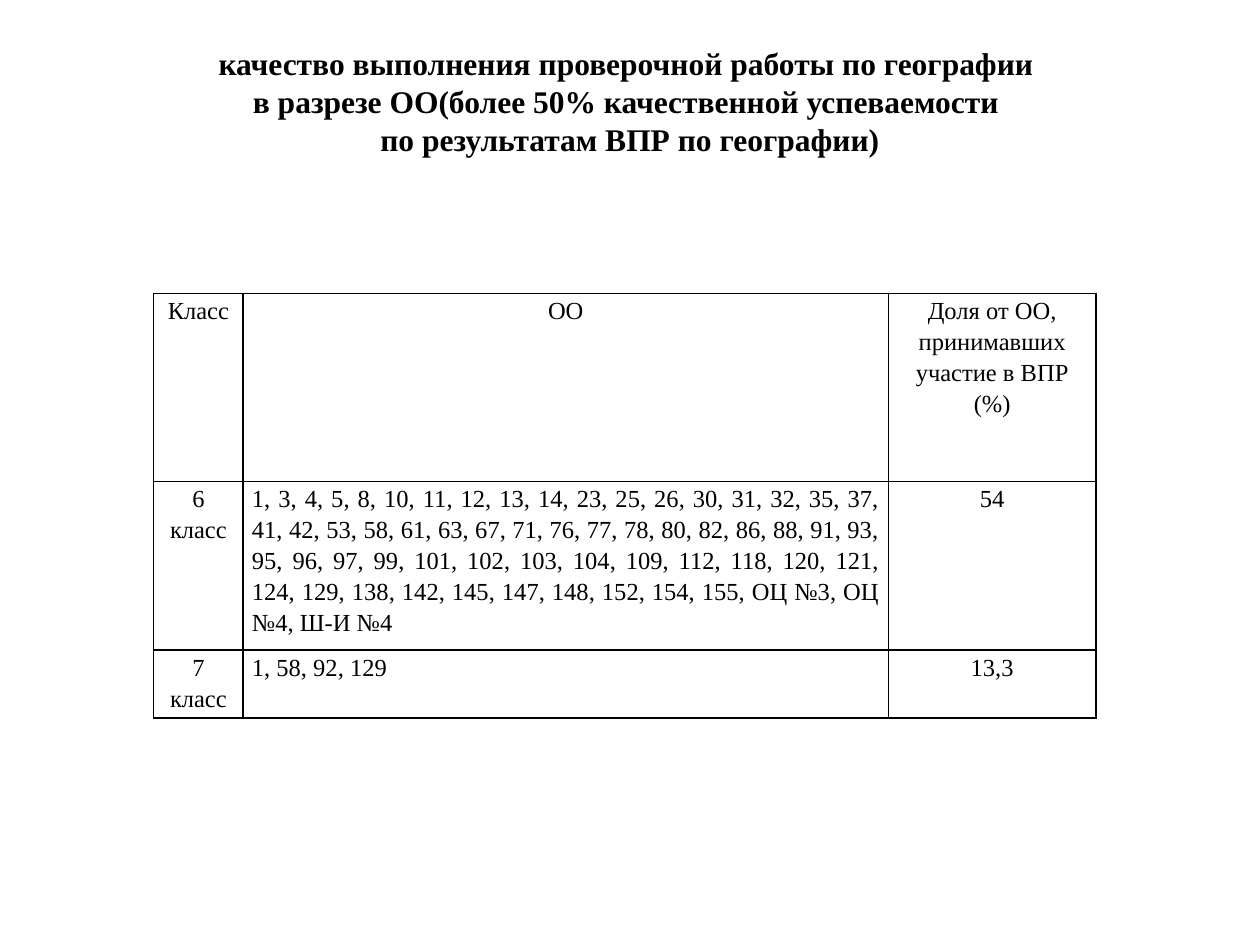
from dataclasses import dataclass

from lxml import etree
from pptx import Presentation
from pptx.dml.color import RGBColor
from pptx.enum.text import MSO_ANCHOR, PP_ALIGN
from pptx.oxml.ns import qn
from pptx.util import Inches, Pt

CENTER, JUSTIFY = PP_ALIGN.CENTER, PP_ALIGN.JUSTIFY
TOP = MSO_ANCHOR.TOP
BLACK = RGBColor(0, 0, 0)
FONT = "Times New Roman"
TITLE_FORMAT = {"name": FONT, "size": Pt(18), "bold": True}
CELL_FORMAT = {"name": FONT, "size": Pt(14), "bold": False}
CELL_MARGINS = {
    "margin_left": Inches(0.07),
    "margin_right": Inches(0.07),
    "margin_top": 0,
    "margin_bottom": 0,
}
COLUMN_WIDTHS = (0.71, 5.12, 1.65)
TITLE = (
    "качество выполнения проверочной работы по географии \v"
    "в разрезе ОО(более 50% качественной успеваемости \v"
    "по результатам ВПР по географии)"
)


@dataclass(frozen=True)
class Row:
    grade: str
    schools: str
    share: str
    height: float
    schools_align: PP_ALIGN = JUSTIFY


ROWS = (
    Row("Класс", "ОО", "Доля от ОО, принимавших участие в ВПР (%)", 1.49, CENTER),
    Row(
        "6 класс",
        "1, 3, 4, 5, 8, 10, 11, 12, 13, 14, 23, 25, 26, 30, 31, 32, 35, 37, "
        "41, 42, 53, 58, 61, 63, 67, 71, 76, 77, 78, 80, 82, 86, 88, 91, 93, "
        "95, 96, 97, 99, 101, 102, 103, 104, 109, 112, 118, 120, 121, "
        "124, 129, 138, 142, 145, 147, 148, 152, 154, 155, ОЦ №3, ОЦ №4, Ш-И №4",
        "54",
        1.23,
    ),
    Row("7 класс", "1, 58, 92, 129", "13,3", 0.49),
)


def write_text(tf, text: str, align: PP_ALIGN, spacing, font_format: dict) -> None:
    tf.text = text
    p = tf.paragraphs[0]
    p.alignment = align
    p.line_spacing = spacing
    for r in p.runs:
        for name, value in font_format.items():
            setattr(r.font, name, value)
        r.font.color.rgb = BLACK


def add_borders(cell) -> None:
    tc_pr = cell._tc.get_or_add_tcPr()
    for index, side in enumerate(("lnL", "lnR", "lnT", "lnB")):
        ln = etree.Element(qn(f"a:{side}"), w=str(Pt(1)))
        fill = etree.SubElement(ln, qn("a:solidFill"))
        etree.SubElement(fill, qn("a:srgbClr"), val=str(BLACK))
        tc_pr.insert(index, ln)


def add_title(s) -> None:
    sp = s.shapes.add_textbox(Inches(0.5), Inches(0.3), Inches(9), Inches(1.25))
    tf = sp.text_frame
    tf.word_wrap = True
    tf.vertical_anchor = TOP
    write_text(tf, TITLE, CENTER, Pt(21.7), TITLE_FORMAT)


def add_results(s) -> None:
    table = s.shapes.add_table(
        len(ROWS), len(COLUMN_WIDTHS), Inches(1.22), Inches(2.33),
        Inches(sum(COLUMN_WIDTHS)), Inches(sum(row.height for row in ROWS)),
    ).table
    table.first_row = table.horz_banding = False
    for column, width in zip(table.columns, COLUMN_WIDTHS):
        column.width = Inches(width)
    for table_row, row in zip(table.rows, ROWS):
        table_row.height = Inches(row.height)
        texts = (row.grade, row.schools, row.share)
        aligns = (CENTER, row.schools_align, CENTER)
        for cell, text, align in zip(table_row.cells, texts, aligns):
            for name, value in CELL_MARGINS.items():
                setattr(cell, name, value)
            cell.fill.background()
            write_text(cell.text_frame, text, align, 1.15, CELL_FORMAT)
            add_borders(cell)


def main() -> None:
    """Build the slide on geography test quality by school."""
    prs = Presentation()
    prs.slide_width, prs.slide_height = Inches(10), Inches(7.5)
    s = prs.slides.add_slide(prs.slide_layouts[6])
    add_title(s)
    add_results(s)
    prs.save("out.pptx")


if __name__ == "__main__":
    main()
